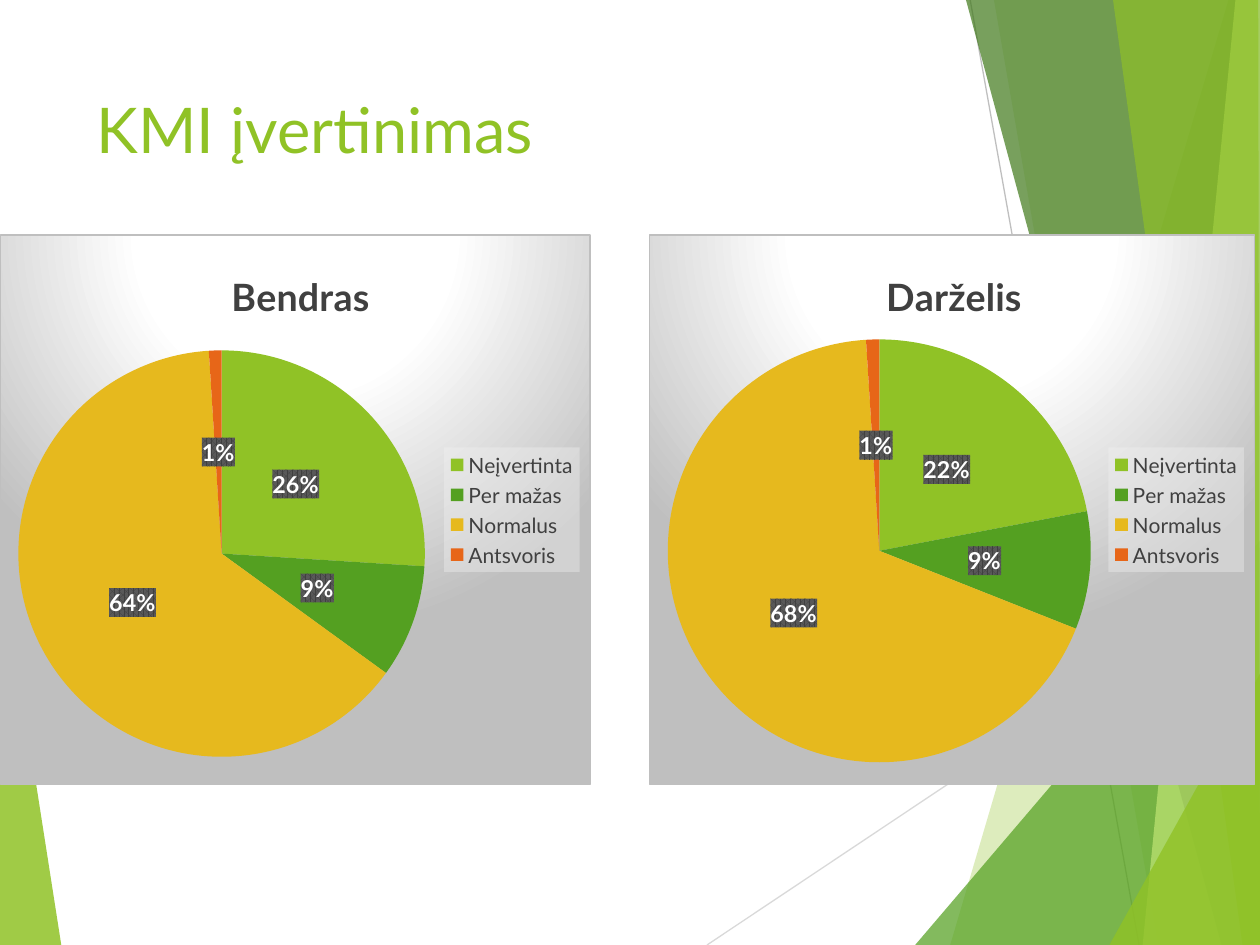
import pptx
import pptx.chart.data
import pptx.dml.color
import pptx.enum.chart
import pptx.enum.shapes
import pptx.enum.text
import pptx.oxml
import pptx.oxml.ns
import pptx.util

Pt = pptx.util.Pt
RGBColor = pptx.dml.color.RGBColor

WIDTH, HEIGHT = 720, 540
FONT = "Lato"
WHITE = RGBColor(0xFF, 0xFF, 0xFF)
LIME = RGBColor(0x90, 0xC2, 0x26)
GREEN = RGBColor(0x54, 0xA0, 0x21)
DARK_GREEN = RGBColor(0x3F, 0x78, 0x19)
PALE_LIME = RGBColor(0xC0, 0xE4, 0x74)
GOLD = RGBColor(0xE6, 0xB9, 0x1E)
ORANGE = RGBColor(0xE7, 0x66, 0x18)
LIGHT_GREY = RGBColor(0xD9, 0xD9, 0xD9)
GREY = RGBColor(0xBF, 0xBF, 0xBF)
DARK_GREY = RGBColor(0x40, 0x40, 0x40)
MID_GREY = RGBColor(0x59, 0x59, 0x59)
LEGEND_GREY = RGBColor(0xF2, 0xF2, 0xF2)

CATEGORIES = ["Neįvertinta", "Per mažas", "Normalus", "Antsvoris"]
SLICE_COLOURS = [LIME, GREEN, GOLD, ORANGE]

# Facets: colour, opacity in percent, corner points
FACETS = [
    (LIME, 85, [(0, 316), (35.3, 540), (0, 540)]),
    (LIME, 30, [(702, 0), (543, 540), (720, 540), (720, 0)]),
    (LIME, 20, [(567.5, 0), (661.7, 540), (720, 540), (720, 0)]),
    (GREEN, 72, [(522.7, 540), (720, 309), (720, 540)]),
    (DARK_GREEN, 70, [(552.3, 0), (698.4, 540), (720, 540), (720, 0)]),
    (PALE_LIME, 70, [(706.3, 0), (653, 540), (720, 540), (720, 0)]),
    (LIME, 65, [(635.8, 0), (710, 540), (720, 540), (718.6, 0)]),
    (LIME, 80, [(634.3, 540), (720, 385.2), (720, 540)]),
]
RAYS = [(LIGHT_GREY, (404, 540), (720, 329)), (GREY, (554.4, 0), (650.9, 540))]


def xml(tag, content):
    """Make a chart element from its tag and inner markup."""
    namespaces = pptx.oxml.ns.nsdecls("c", "a")
    return pptx.oxml.parse_xml(f"<c:{tag} {namespaces}>{content}</c:{tag}>")


def colour_xml(colour, opacity=100):
    return f'<a:srgbClr val="{colour}"><a:alpha val="{opacity * 1000}"/></a:srgbClr>'


def add_facet(slide, colour, opacity, corners):
    builder = slide.shapes.build_freeform(*corners[0], scale=float(Pt(1)))
    builder.add_line_segments(corners[1:], close=True)
    facet = builder.convert_to_shape()
    facet.shadow.inherit = False
    facet.fill.solid()
    facet.fill.fore_color.rgb = colour
    facet.line.fill.background()
    tint = facet.fill._xPr.find(".//" + pptx.oxml.ns.qn("a:srgbClr"))
    tint.append(pptx.oxml.parse_xml(
        f'<a:alpha {pptx.oxml.ns.nsdecls("a")} val="{opacity * 1000}"/>'))


def add_ray(slide, colour, start, end):
    ray = slide.shapes.add_connector(
        pptx.enum.shapes.MSO_CONNECTOR.STRAIGHT, *map(Pt, start + end))
    ray.line.color.rgb = colour
    ray.line.width = Pt(0.75)
    ray._element.spPr.append(pptx.oxml.parse_xml(
        f'<a:effectLst {pptx.oxml.ns.nsdecls("a")}/>'))


def format_title(title, text):
    title.left, title.top, title.width, title.height = map(Pt, (48, 48, 500, 104))
    frame = title.text_frame
    frame.text = text
    frame.vertical_anchor = pptx.enum.text.MSO_ANCHOR.TOP
    paragraph = frame.paragraphs[0]
    paragraph.alignment = pptx.enum.text.PP_ALIGN.LEFT
    set_font(paragraph.font, 36, LIME, False)
    # Keep the title in front of the facets
    title._element.getparent().append(title._element)


def set_font(font, size, colour, bold):
    font.name, font.size, font.bold = FONT, Pt(size), bold
    font.color.rgb = colour


def set_layout(parent, position, **fractions):
    """Place a chart part by fractions of the chart's size."""
    present = parent.find(pptx.oxml.ns.qn("c:layout"))
    if present is not None:
        parent.remove(present)
    target = '<c:layoutTarget val="inner"/>' if "w" in fractions else ""
    modes = '<c:xMode val="edge"/><c:yMode val="edge"/>'
    places = "".join(f'<c:{key} val="{value}"/>' for key, value in fractions.items())
    parent.insert(position, xml(
        "layout", f"<c:manualLayout>{target}{modes}{places}</c:manualLayout>"))


def add_pie(slide, name, left, width, shares, plot_box):
    data = pptx.chart.data.CategoryChartData()
    data.categories = CATEGORIES
    data.add_series("Series 1", shares)
    chart = slide.shapes.add_chart(
        pptx.enum.chart.XL_CHART_TYPE.PIE,
        Pt(left), Pt(134), Pt(width), Pt(314.6), data).chart
    chart.font.name, chart.font.size = FONT, Pt(10)
    root = chart.element

    # Heading
    heading = chart.chart_title
    heading.text_frame.text = name
    set_font(heading.text_frame.paragraphs[0].font, 21.6, DARK_GREY, True)
    heading.include_in_layout = True
    set_layout(root.xpath(".//c:title")[0], 1, x=0.38, y=0.05)
    set_layout(root.xpath(".//c:plotArea")[0], 0, **plot_box)

    # Legend on a translucent panel
    chart.has_legend = True
    chart.legend.position = pptx.enum.chart.XL_LEGEND_POSITION.RIGHT
    chart.legend.include_in_layout = False
    set_font(chart.legend.font, 12, DARK_GREY, False)
    root.xpath(".//c:legend/c:txPr")[0].addprevious(xml(
        "spPr", f"<a:solidFill>{colour_xml(LEGEND_GREY, 39)}</a:solidFill>"))

    # Slices and their percentages
    chart.plots[0].vary_by_categories = True
    series = chart.plots[0].series[0]
    for index, colour in enumerate(SLICE_COLOURS):
        fill = series.points[index].format.fill
        fill.solid()
        fill.fore_color.rgb = colour
    labels = series.data_labels
    labels.show_value, labels.show_percentage = False, True
    labels.number_format, labels.number_format_is_linked = "0%", False
    labels.position = pptx.enum.chart.XL_LABEL_POSITION.CENTER
    set_font(labels.font, 13.3, WHITE, True)
    root.xpath(".//c:ser/c:dLbls/c:txPr")[0].addprevious(xml(
        "spPr", f'<a:pattFill prst="pct75"><a:fgClr>{colour_xml(DARK_GREY)}</a:fgClr>'
        f"<a:bgClr>{colour_xml(MID_GREY)}</a:bgClr></a:pattFill>"))

    # Radial backdrop with a thin border
    stops = "".join(f'<a:gs pos="{place * 1000}">{colour_xml(colour)}</a:gs>'
                    for place, colour in ((0, WHITE), (39, WHITE), (100, GREY)))
    root.xpath("./c:chart")[0].addnext(xml(
        "spPr", f'<a:gradFill><a:gsLst>{stops}</a:gsLst><a:path path="circle">'
        '<a:fillToRect l="50000" t="-80000" r="50000" b="180000"/></a:path></a:gradFill>'
        f'<a:ln w="{Pt(0.75)}"><a:solidFill>{colour_xml(GREY)}</a:solidFill></a:ln>'))


def main():
    deck = pptx.Presentation()
    deck.slide_width, deck.slide_height = Pt(WIDTH), Pt(HEIGHT)
    slide = deck.slides.add_slide(deck.slide_layouts[5])

    # Backdrop: left facet, rays, then right facets
    add_facet(slide, *FACETS[0])
    for ray in RAYS:
        add_ray(slide, *ray)
    for facet in FACETS[1:]:
        add_facet(slide, *facet)

    format_title(slide.shapes.title, "KMI įvertinimas")

    # Pies
    add_pie(slide, "Bendras", 0, 337.5, (26, 9, 64, 1),
            dict(x=0.03, y=0.21, w=0.69, h=0.74))
    add_pie(slide, "Darželis", 370.8, 346.3, (22, 9, 68, 1),
            dict(x=0.03, y=0.19, w=0.7, h=0.77))
    deck.save("out.pptx")


if __name__ == "__main__":
    main()
